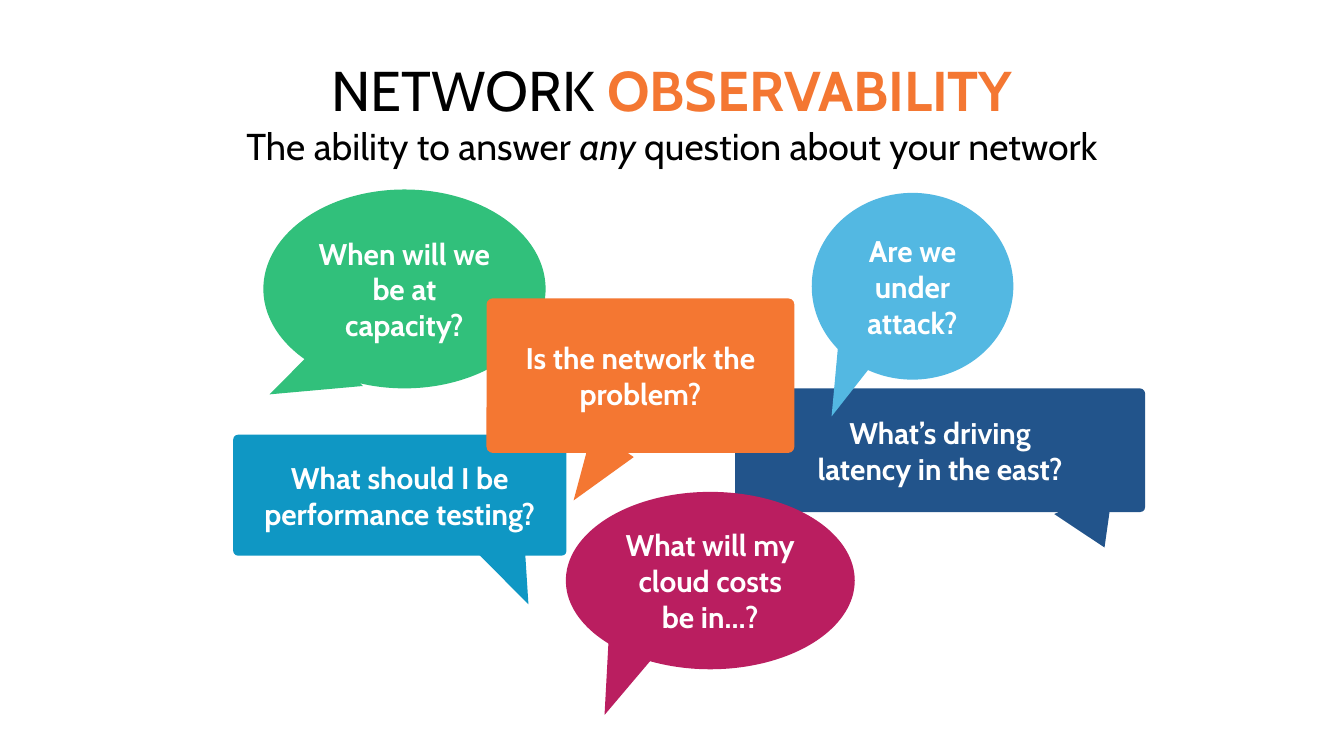
"""Build a slide of overlapping speech bubbles that ask questions about a network."""
from dataclasses import dataclass

from pptx import Presentation
from pptx.dml.color import RGBColor
from pptx.enum.shapes import MSO_SHAPE as Preset
from pptx.enum.text import MSO_ANCHOR as Anchor, MSO_AUTO_SIZE as AutoSize, PP_ALIGN as Align
from pptx.util import Inches, Pt

COLUMNS, ROWS = 100, 56.25
CELL = Inches(0.1)
FONT = "Cabin"
BLACK = RGBColor(0x00, 0x00, 0x00)
WHITE = RGBColor(0xFF, 0xFF, 0xFF)
ORANGE = RGBColor(0xF4, 0x77, 0x32)
TEAL = RGBColor(0x0F, 0x97, 0xC4)
NAVY = RGBColor(0x22, 0x54, 0x8B)
MAGENTA = RGBColor(0xBA, 0x1E, 0x60)
GREEN = RGBColor(0x31, 0xC0, 0x7B)
SKY = RGBColor(0x53, 0xB8, 0xE2)


@dataclass(frozen=True)
class Area:
    """A rectangle in grid columns and rows."""
    column: float
    row: float
    columns: float
    rows: float

    def box(self) -> tuple[int, ...]:
        """Give left, top, width and height as slide lengths."""
        return tuple(round(cells * CELL) for cells in (self.column, self.row, self.columns, self.rows))


@dataclass(frozen=True)
class Tail:
    """The triangular pointer of a bubble."""
    area: Area
    rotation: float
    flipped: bool = True
    apex: float = 0.5


@dataclass(frozen=True)
class Bubble:
    """A question with its outline, colour and tail."""
    question: str
    outline: Preset
    color: RGBColor
    area: Area
    tail: Tail


@dataclass(frozen=True)
class Phrase:
    """A stretch of heading text in one style."""
    words: str
    size: int
    color: RGBColor = BLACK
    bold: bool = False
    italic: bool = False


HEADING_AREA = Area(0.2, 3.95, 99.6, 8.7)
HEADING = (
    (Phrase("NETWORK ", 30), Phrase("OBSERVABILITY", 30, ORANGE, bold=True)),
    (Phrase("The ability to answer ", 20), Phrase("any", 20, italic=True),
     Phrase(" question about your network", 20)),
)
BUBBLES = (
    Bubble("What should I be performance testing?", Preset.ROUNDED_RECTANGLE, TEAL,
           Area(17.35, 32.35, 24.8, 9), Tail(Area(36.3, 40, 3.9, 5.2), 155.8)),
    Bubble("What’s driving\vlatency in the east?", Preset.ROUNDED_RECTANGLE, NAVY,
           Area(54.7, 28.9, 30.5, 9.2), Tail(Area(79, 37.1, 4.8, 3.8), 155.8)),
    Bubble("What will my cloud costs be in…?", Preset.OVAL, MAGENTA,
           Area(42.1, 36.6, 21.5, 13.2), Tail(Area(44.1, 47.6, 3.9, 5.8), 201.7, flipped=False)),
    Bubble("When will we be at capacity?", Preset.OVAL, GREEN,
           Area(19.6, 14.1, 21, 14.8), Tail(Area(21.2, 26.2, 4.5, 5.5), 227, apex=0.05)),
    Bubble("Is the network the problem?", Preset.ROUNDED_RECTANGLE, ORANGE,
           Area(36.2, 22.2, 22.9, 11.5), Tail(Area(42.3, 32.5, 3.7, 5.2), 214.6)),
    Bubble("Are we under attack?", Preset.OVAL, SKY,
           Area(60.4, 14.35, 15, 13.9), Tail(Area(61.2, 25.1, 3.6, 6.1), 201.7, flipped=False)),
)


def style_run(run, size: int, color: RGBColor, bold: bool, italic: bool = False) -> None:
    """Apply the slide font to a run."""
    run.font.name = FONT
    run.font.size = Pt(size)
    run.font.color.rgb = color
    run.font.bold = bold
    run.font.italic = italic


def prepare_frame(frame) -> None:
    """Wrap and centre text vertically with even margins."""
    frame.word_wrap = True
    frame.auto_size = AutoSize.NONE
    frame.vertical_anchor = Anchor.MIDDLE
    frame.margin_left = frame.margin_right = frame.margin_top = frame.margin_bottom = CELL


def write_heading(title) -> None:
    """Place the title and write its two lines."""
    title.left, title.top, title.width, title.height = HEADING_AREA.box()
    frame = title.text_frame
    prepare_frame(frame)
    frame.text = "\n".join("" for _ in HEADING)
    for paragraph, phrases in zip(frame.paragraphs, HEADING):
        paragraph.alignment = Align.CENTER
        for phrase in phrases:
            run = paragraph.add_run()
            run.text = phrase.words
            style_run(run, phrase.size, phrase.color, phrase.bold, phrase.italic)


def add_solid(shapes, preset: Preset, area: Area, color: RGBColor):
    """Add a flat shape without outline or shadow."""
    solid = shapes.add_shape(preset, *area.box())
    solid.shadow.inherit = False
    solid.fill.solid()
    solid.fill.fore_color.rgb = color
    solid.line.fill.background()
    return solid


def draw_bubble(shapes, bubble: Bubble) -> None:
    """Draw a bubble and its tail as one group."""
    group = shapes.add_group_shape()
    body = add_solid(group.shapes, bubble.outline, bubble.area, bubble.color)
    if bubble.outline == Preset.ROUNDED_RECTANGLE:
        body.adjustments[0] = 0.04
    prepare_frame(body.text_frame)
    body.text_frame.text = bubble.question
    for paragraph in body.text_frame.paragraphs:
        paragraph.alignment = Align.CENTER
        for run in paragraph.runs:
            style_run(run, 16, WHITE, bold=True)

    pointer = add_solid(group.shapes, Preset.ISOSCELES_TRIANGLE, bubble.tail.area, bubble.color)
    pointer.adjustments[0] = bubble.tail.apex
    pointer.rotation = bubble.tail.rotation
    if bubble.tail.flipped:
        pointer._element.spPr.xfrm.set("flipH", "1")


def main() -> None:
    """Build and save the slide."""
    deck = Presentation()
    deck.slide_width, deck.slide_height = round(COLUMNS * CELL), round(ROWS * CELL)
    slide = deck.slides.add_slide(deck.slide_layouts.get_by_name("Title Only"))
    write_heading(slide.shapes.title)
    for bubble in BUBBLES:
        draw_bubble(slide.shapes, bubble)
    deck.save("out.pptx")


if __name__ == "__main__":
    main()
